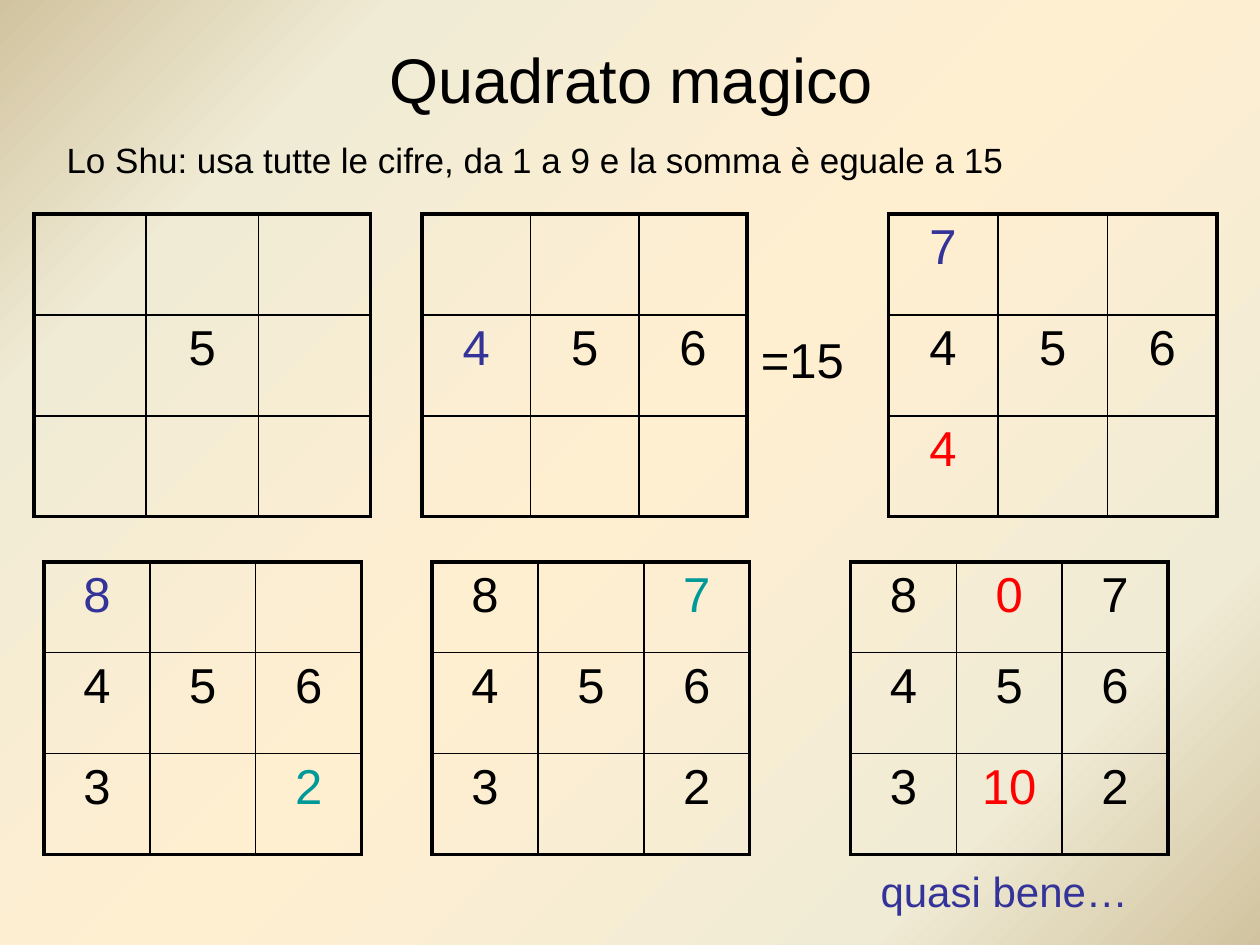
import dataclasses
import pptx
import pptx.dml.color
import pptx.enum.text
import pptx.oxml
import pptx.oxml.ns
import pptx.util
from lxml import etree

qn = pptx.oxml.ns.qn
PX = 9144


@dataclasses.dataclass
class Theme:
    font: str = "Arial"
    ink: str = "000000"
    blue: str = "333399"
    red: str = "FF0000"
    teal: str = "009999"
    title: int = 36
    digit: int = 28
    note: int = 24
    lead: int = 20
    gap: float = 5.6
    thick: float = 2.25
    thin: float = 1
    back: tuple = ((0, "D1C39F"), (18, "F0EBD5"), (50, "FFEFD1"),
                   (82, "F0EBD5"), (100, "D1C39F"))


class Deck:
    def __init__(self, theme):
        self.theme = theme
        self.show = pptx.Presentation()
        self.show.slide_width = 1000 * PX
        self.show.slide_height = 750 * PX
        self.slide = self.show.slides.add_slide(self.show.slide_layouts[5])
        self.tint = {"b": theme.blue, "r": theme.red, "t": theme.teal}

    def back(self):
        fill = self.slide.background.fill
        fill.gradient()
        fill.gradient_angle = 315
        stops = self.slide.element.find(".//" + qn("a:gsLst"))
        for old in list(stops):
            stops.remove(old)
        for pos, color in self.theme.back:
            stop = etree.SubElement(stops, qn("a:gs"), pos=str(pos * 1000))
            etree.SubElement(stop, qn("a:srgbClr"), val=color)

    def run(self, para, text, size, color):
        run = para.add_run()
        run.text = text
        run.font.name = self.theme.font
        run.font.size = pptx.util.Pt(size)
        run.font.color.rgb = pptx.dml.color.RGBColor.from_string(color)

    def title(self, text, x, y, w, h):
        box = self.slide.shapes.title
        box.left, box.top, box.width, box.height = [n * PX for n in (x, y, w, h)]
        box.text_frame.vertical_anchor = pptx.enum.text.MSO_ANCHOR.MIDDLE
        para = box.text_frame.paragraphs[0]
        para.alignment = pptx.enum.text.PP_ALIGN.CENTER
        self.run(para, text, self.theme.title, self.theme.ink)

    def text(self, text, x, y, w, h, size, color):
        box = self.slide.shapes.add_textbox(x * PX, y * PX, w * PX, h * PX)
        frame = box.text_frame
        frame.word_wrap = False
        frame.auto_size = pptx.enum.text.MSO_AUTO_SIZE.SHAPE_TO_FIT_TEXT
        self.run(frame.paragraphs[0], text, size, color)

    def edge(self, cell, outer):
        props = cell._tc.get_or_add_tcPr()
        for i, (side, thick) in enumerate(outer.items()):
            width = pptx.util.Pt(self.theme.thick if thick else self.theme.thin)
            line = etree.Element(qn("a:ln" + side), w=str(int(width)))
            fill = etree.SubElement(line, qn("a:solidFill"))
            etree.SubElement(fill, qn("a:srgbClr"), val=self.theme.ink)
            props.insert(i, line)

    def square(self, x, y, col, rows, marks):
        frame = self.slide.shapes.add_table(
            3, 3, x * PX, y * PX, 3 * col * PX, sum(rows) * PX)
        table = frame.table
        table.first_row = table.horz_banding = False
        for i, line in enumerate(marks.split("/")):
            table.rows[i].height = rows[i] * PX
            table.columns[i].width = col * PX
            for j, mark in enumerate(line.split()):
                cell = table.cell(i, j)
                cell.fill.background()
                self.edge(cell, {"L": j == 0, "R": j == 2,
                                 "T": i == 0, "B": i == 2})
                if mark != "-":
                    para = cell.text_frame.paragraphs[0]
                    para.alignment = pptx.enum.text.PP_ALIGN.CENTER
                    para.space_before = pptx.util.Pt(self.theme.gap)
                    color = self.tint.get(mark[-1], self.theme.ink)
                    self.run(para, mark.rstrip("brt"), self.theme.digit, color)


def main():
    theme = Theme()
    deck = Deck(theme)
    deck.back()
    deck.title("Quadrato magico", 51, 0, 900, 125)
    deck.text("Lo Shu: usa tutte le cifre, da 1 a 9 e la somma è eguale a 15",
              43, 105, 797, 44, theme.lead, theme.ink)
    high, low = (80, 80, 80), (72, 80, 80)
    for x, y, col, rows, marks in (
        (27, 170, 89, high, "- - -/- 5 -/- - -"),
        (335, 170, 86, high, "- - -/4b 5 6/- - -"),
        (705, 170, 87, high, "7b - -/4 5 6/4r - -"),
        (35, 446, 84, low, "8b - -/4 5 6/3 - 2t"),
        (343, 446, 84, low, "8 - 7t/4 5 6/3 - 2"),
        (675, 446, 84, low, "8 0r 7/4 5 6/3 10r 2"),
    ):
        deck.square(x, y, col, rows, marks)
    deck.text("=15", 594, 257, 86, 57, theme.digit, theme.ink)
    deck.text("quasi bene…", 689, 682, 219, 51, theme.note, theme.blue)
    deck.show.save("out.pptx")


if __name__ == "__main__":
    main()
